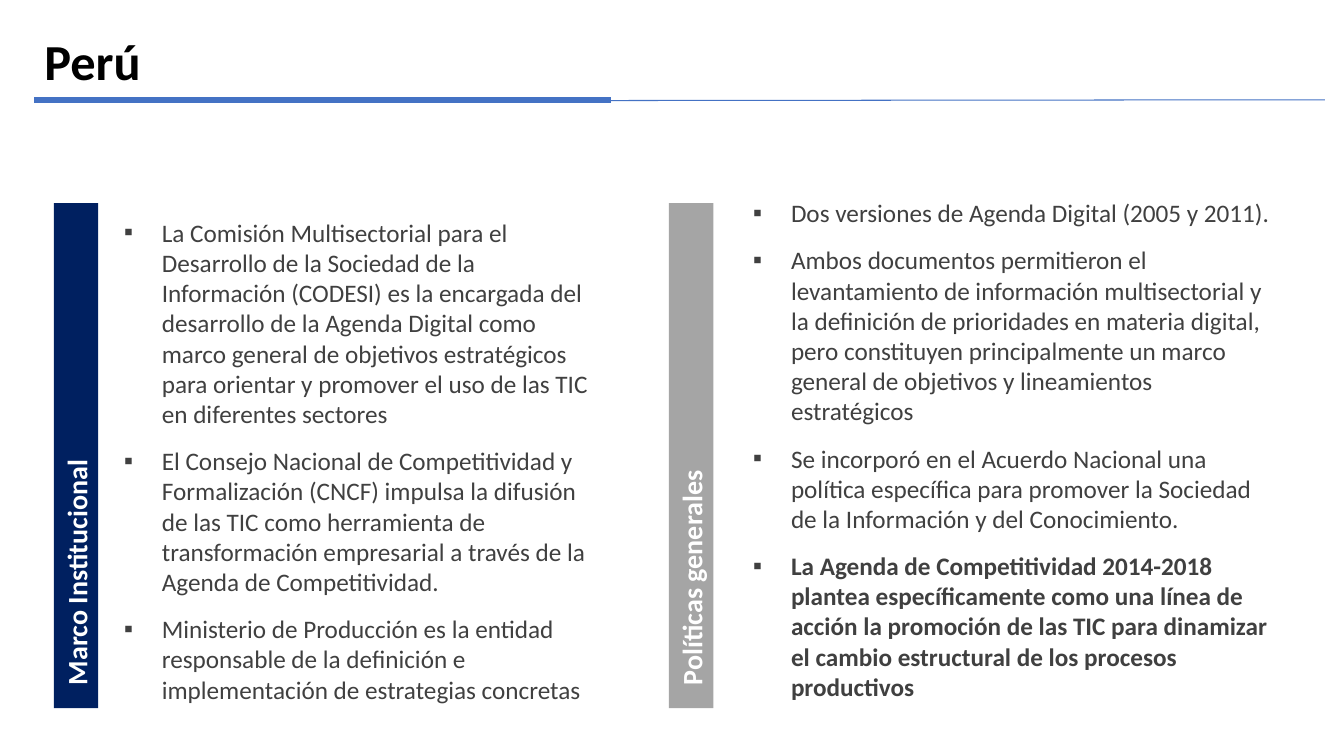
from dataclasses import dataclass

from lxml.etree import SubElement
from pptx import Presentation
from pptx.dml.color import RGBColor
from pptx.enum.shapes import MSO_CONNECTOR, MSO_SHAPE
from pptx.enum.text import MSO_ANCHOR, MSO_AUTO_SIZE, PP_ALIGN
from pptx.oxml.ns import qn
from pptx.util import Inches, Pt

# Content: heading, then one entry per column
TITLE = "Perú"
COLUMNS = [
    {
        "label": "Marco Institucional",
        "fill": "002060",
        "anchor": MSO_ANCHOR.MIDDLE,
        "box": (1.13, 2.08, 4.96, 4.98),
        "items": [
            "La Comisión Multisectorial para el Desarrollo de la Sociedad de la "
            "Información (CODESI) es la encargada del desarrollo de la Agenda Digital "
            "como marco general de objetivos estratégicos para orientar y promover el "
            "uso de las TIC en diferentes sectores",
            "El Consejo Nacional de Competitividad y Formalización (CNCF) impulsa la "
            "difusión de las TIC como herramienta de transformación empresarial a "
            "través de la Agenda de Competitividad.",
            "Ministerio de Producción es la entidad responsable de la definición e "
            "implementación de estrategias concretas",
        ],
        "bold_items": (),
    },
    {
        "label": "Políticas generales",
        "fill": "A5A5A5",
        "anchor": MSO_ANCHOR.TOP,
        "box": (7.37, 1.91, 5.37, 5.59),
        "items": [
            "Dos versiones de Agenda Digital (2005 y 2011).",
            "Ambos documentos permitieron el levantamiento de información "
            "multisectorial y la definición de prioridades en materia digital, pero "
            "constituyen principalmente un marco general de objetivos y lineamientos "
            "estratégicos",
            "Se incorporó en el Acuerdo Nacional una política específica para promover "
            "la Sociedad de la Información y del Conocimiento.",
            "La Agenda de Competitividad 2014-2018 plantea específicamente como una "
            "línea de acción la promoción de las TIC para dinamizar el cambio "
            "estructural de los procesos productivos",
        ],
        "bold_items": (3,),
    },
]


@dataclass(frozen=True)
class Theme:
    font: str = "Calibri"
    title: str = "000000"
    body: str = "404040"
    label: str = "FFFFFF"
    rule: str = "4472C4"
    title_size: int = 36
    label_size: int = 20
    body_size: int = 18


THEME = Theme()

# Grid, in inches
WIDTH, HEIGHT = 13.33, 7.5
MARGIN, RULE_Y = 0.34, 0.99
BAR_LEFT, BAR_PITCH = 0.535, 6.1
BAR_CENTER_Y, BAR_LENGTH, BAR_THICKNESS = 4.52, 5.01, 0.44
LABEL_INSET = 0.23
RULES = [(MARGIN, 6.06, RULE_Y, 4.5), (3.61, 13.14, 1.0, 0.75)]


def place(shape, left, top, width, height):
    shape.left, shape.top = Inches(left), Inches(top)
    shape.width, shape.height = Inches(width), Inches(height)


def prepare_frame(shape, anchor):
    frame = shape.text_frame
    frame.word_wrap = True
    frame.auto_size = MSO_AUTO_SIZE.NONE
    frame.vertical_anchor = anchor
    return frame


def write(paragraph, text, *, size, color, bold=False, after=0, bullet=None):
    paragraph.alignment = PP_ALIGN.LEFT
    paragraph.line_spacing = 1.0
    paragraph.space_before = Pt(0)
    paragraph.space_after = Pt(after)
    run = paragraph.add_run()
    run.text = text
    run.font.name = THEME.font
    run.font.size = Pt(size)
    run.font.bold = bold
    run.font.color.rgb = RGBColor.from_string(color)
    if bullet:
        properties = paragraph._p.get_or_add_pPr()
        properties.set("marL", str(Inches(0.375)))
        properties.set("indent", str(Inches(-0.375)))
        SubElement(properties, qn("a:buFont"), typeface=THEME.font)
        SubElement(properties, qn("a:buChar"), char=bullet)


def add_rule(slide, start, end, y, weight):
    rule = slide.shapes.add_connector(
        MSO_CONNECTOR.STRAIGHT, Inches(start), Inches(y), Inches(end), Inches(RULE_Y))
    rule.line.color.rgb = RGBColor.from_string(THEME.rule)
    rule.line.width = Pt(weight)
    SubElement(rule._element.spPr, qn("a:effectLst"))


def add_label_bar(slide, index, column):
    # The bar is laid out flat, then turned about its centre
    center_x = BAR_LEFT + index * BAR_PITCH + BAR_THICKNESS / 2
    bar = slide.shapes.add_shape(MSO_SHAPE.RECTANGLE, 0, 0, 0, 0)
    place(bar, center_x - BAR_LENGTH / 2, BAR_CENTER_Y - BAR_THICKNESS / 2,
          BAR_LENGTH, BAR_THICKNESS)
    bar.rotation = 270
    bar.shadow.inherit = False
    bar.fill.solid()
    bar.fill.fore_color.rgb = RGBColor.from_string(column["fill"])
    bar.line.fill.background()
    frame = prepare_frame(bar, MSO_ANCHOR.MIDDLE)
    frame.margin_left = Inches(LABEL_INSET)
    write(frame.paragraphs[0], column["label"], size=THEME.label_size,
          color=THEME.label, bold=True)


def fill_list(placeholder, column):
    place(placeholder, *column["box"])
    frame = prepare_frame(placeholder, column["anchor"])
    for index, item in enumerate(column["items"]):
        paragraph = frame.add_paragraph() if index else frame.paragraphs[0]
        write(paragraph, item, size=THEME.body_size, color=THEME.body,
              bold=index in column["bold_items"], after=12, bullet="▪")


def main():
    presentation = Presentation()
    presentation.slide_width = Inches(WIDTH)
    presentation.slide_height = Inches(HEIGHT)
    slide = presentation.slides.add_slide(
        presentation.slide_layouts.get_by_name("Two Content"))

    # Heading and its rules
    title = slide.shapes.title
    place(title, MARGIN, 0.2, WIDTH - 2 * MARGIN, 0.79)
    write(prepare_frame(title, MSO_ANCHOR.MIDDLE).paragraphs[0], TITLE,
          size=THEME.title_size, color=THEME.title, bold=True)
    for start, end, y, weight in RULES:
        add_rule(slide, start, end, y, weight)

    # Columns: a turned label bar beside a bulleted list
    for index, column in enumerate(COLUMNS):
        add_label_bar(slide, index, column)
        fill_list(slide.placeholders[index + 1], column)

    presentation.save("out.pptx")


if __name__ == "__main__":
    main()
